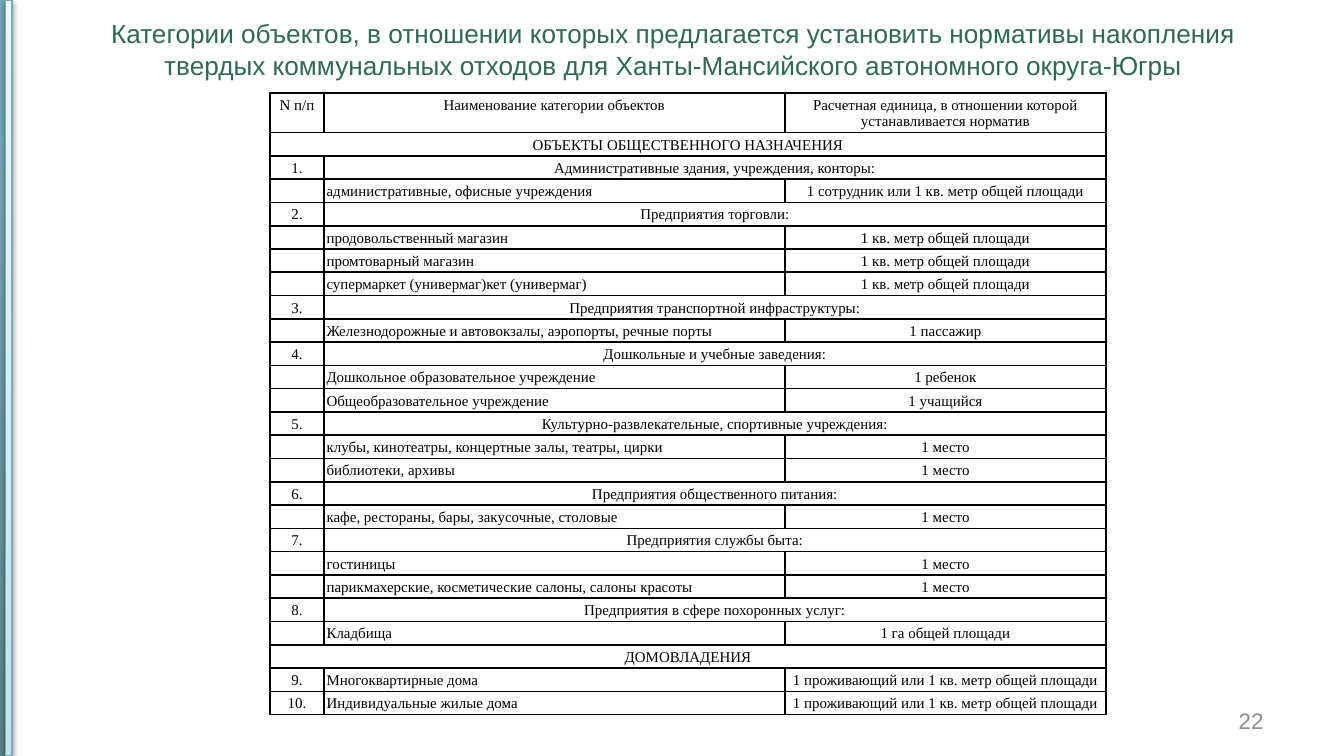
from dataclasses import dataclass

from lxml import etree
from pptx import Presentation
from pptx import util as u
from pptx.dml.color import RGBColor
from pptx.enum import shapes, text
from pptx.oxml import ns


@dataclass(frozen=True)
class Theme:
    heading: str = "316857"
    ink: str = "000000"
    muted: str = "8C8C8C"
    strip_line: str = "80A9B3"
    dark_strip: tuple = ((0, "5D848D"), (80, "79ABB8"), (100, "78ADBA"))
    light_strip: tuple = ((0, "BDE4EF"), (35, "D0EBF3"), (100, "ECF8FB"))
    sans: str = "Arial"
    serif: str = "Times New Roman"
    title_size: int = 14
    number_size: int = 12
    table_size: int = 8


CENTER = text.PP_ALIGN.CENTER
LEFT = text.PP_ALIGN.LEFT
RIGHT = text.PP_ALIGN.RIGHT

TITLE = (
    "Категории объектов, в отношении которых предлагается установить нормативы накопления "
    "твердых коммунальных отходов для Ханты-Мансийского автономного округа-Югры"
)
HEADER = (
    "N п/п",
    "Наименование категории объектов",
    "Расчетная единица, в отношении которой устанавливается норматив",
)
AREA = "1 кв. метр общей площади"
SEAT = "1 место"
RESIDENT = "1 проживающий или 1 кв. метр общей площади"
ROWS = [
    ("ОБЪЕКТЫ ОБЩЕСТВЕННОГО НАЗНАЧЕНИЯ",),
    ("1.", "Административные здания, учреждения, конторы:"),
    ("", "административные, офисные учреждения", "1 сотрудник или 1 кв. метр общей площади"),
    ("2.", "Предприятия торговли:"),
    ("", "продовольственный магазин", AREA),
    ("", "промтоварный магазин", AREA),
    ("", "супермаркет (универмаг)кет (универмаг)", AREA),
    ("3.", "Предприятия транспортной инфраструктуры:"),
    ("", "Железнодорожные и автовокзалы, аэропорты, речные порты", "1 пассажир"),
    ("4.", "Дошкольные и учебные заведения:"),
    ("", "Дошкольное образовательное учреждение", "1 ребенок"),
    ("", "Общеобразовательное учреждение", "1 учащийся"),
    ("5.", "Культурно-развлекательные, спортивные учреждения:"),
    ("", "клубы, кинотеатры, концертные залы, театры, цирки", SEAT),
    ("", "библиотеки, архивы", SEAT),
    ("6.", "Предприятия общественного питания:"),
    ("", "кафе, рестораны, бары, закусочные, столовые", SEAT),
    ("7.", "Предприятия службы быта:"),
    ("", "гостиницы", SEAT),
    ("", "парикмахерские, косметические салоны, салоны красоты", SEAT),
    ("8.", "Предприятия в сфере похоронных услуг:"),
    ("", "Кладбища", "1 га общей площади"),
    ("ДОМОВЛАДЕНИЯ",),
    ("9.", "Многоквартирные дома", RESIDENT),
    ("10.", "Индивидуальные жилые дома", RESIDENT),
]


def add_xml(parent, tag, **attrs):
    return etree.SubElement(parent, ns.qn(tag), {k: str(v) for k, v in attrs.items()})


def write(tf, content, *, size, font, color, align=LEFT, anchor=text.MSO_ANCHOR.MIDDLE):
    tf.word_wrap = True
    tf.vertical_anchor = anchor
    p = tf.paragraphs[0]
    p.alignment = align
    if not content:
        add_xml(p._p, "a:endParaRPr", sz=size * 100)
        return
    r = p.add_run()
    r.text = content
    r.font.size = u.Pt(size)
    r.font.name = font
    r.font.color.rgb = RGBColor.from_string(color)


class Deck:
    def __init__(self, prs, theme):
        self.theme = theme
        self.height = prs.slide_height
        self.s = prs.slides.add_slide(prs.slide_layouts[5])

    def strip(self, left, width, stops, *, line=None, alpha, distance):
        sp = self.s.shapes.add_shape(shapes.MSO_SHAPE.RECTANGLE, u.Inches(left), 0,
                                     u.Inches(width), self.height)
        sp.fill.gradient()
        sp.fill.gradient_angle = 90
        gs_list = sp._element.spPr.find(".//" + ns.qn("a:gsLst"))
        for gs in list(gs_list):
            gs_list.remove(gs)
        for position, color in stops:
            gs = add_xml(gs_list, "a:gs", pos=position * 1000)
            add_xml(gs, "a:srgbClr", val=color)
        if line:
            sp.line.color.rgb = RGBColor.from_string(line)
            sp.line.width = u.Pt(0.75)
        else:
            sp.line.fill.background()
        sp.shadow.inherit = False
        effects = sp._element.spPr.find(ns.qn("a:effectLst"))
        shadow = add_xml(effects, "a:outerShdw", blurRad=u.Pt(3.1), dist=u.Pt(distance),
                         dir=5400000, rotWithShape=0)
        color = add_xml(shadow, "a:srgbClr", val=self.theme.ink)
        add_xml(color, "a:alpha", val=alpha * 1000)

    def title(self, content, box):
        sp = self.s.shapes.title
        sp.left, sp.top, sp.width, sp.height = map(u.Inches, box)
        tf = sp.text_frame
        tf.auto_size = text.MSO_AUTO_SIZE.NONE
        tf.margin_bottom = u.Inches(0.28)
        write(tf, content, size=self.theme.title_size, font=self.theme.sans,
              color=self.theme.heading, align=CENTER)

    def page_number(self, content, box):
        sp = self.s.shapes.add_textbox(*map(u.Inches, box))
        write(sp.text_frame, content, size=self.theme.number_size, font=self.theme.sans,
              color=self.theme.muted, align=RIGHT)

    def cell(self, cell, content, align):
        cell.margin_left = cell.margin_right = u.Inches(0.02)
        cell.margin_top = u.Inches(0.03)
        cell.margin_bottom = 0
        write(cell.text_frame, content, size=self.theme.table_size, font=self.theme.serif,
              color=self.theme.ink, align=align)
        cell.vertical_anchor = text.MSO_ANCHOR.TOP
        tc_pr = cell._tc.get_or_add_tcPr()
        for side in ("a:lnL", "a:lnR", "a:lnT", "a:lnB"):
            ln = add_xml(tc_pr, side, w=u.Pt(1))
            fill = add_xml(ln, "a:solidFill")
            add_xml(fill, "a:srgbClr", val=self.theme.ink)
        cell.fill.background()

    def table(self, header, rows, box, widths, header_height):
        frame = self.s.shapes.add_table(len(rows) + 1, len(widths), *map(u.Inches, box))
        table = frame.table
        table.first_row = table.horz_banding = False
        for column, width in zip(table.columns, widths):
            column.width = u.Inches(width)
        row_height = (box[3] - header_height) / len(rows)
        for i, values in enumerate([header, *rows]):
            table.rows[i].height = u.Inches(row_height if i else header_height)
            last = len(values) - 1
            for j in range(len(widths)):
                is_name = i > 0 and last == 2 and j == 1
                content = values[j] if j <= last else ""
                self.cell(table.cell(i, j), content, LEFT if is_name else CENTER)
            if last < 2:
                table.cell(i, last).merge(table.cell(i, 2))


def main():
    prs = Presentation()
    prs.slide_width = u.Inches(10)
    prs.slide_height = prs.slide_width * 9 // 16
    theme = Theme()
    deck = Deck(prs, theme)
    deck.strip(-0.01, 0.05, theme.dark_strip, alpha=35, distance=1.8)
    deck.strip(0.04, 0.05, theme.light_strip, line=theme.strip_line, alpha=38, distance=1.6)
    deck.title(TITLE, (0.51, 0.01, 9, 0.94))
    deck.page_number("22", (7.17, 5.21, 2.33, 0.3))
    deck.table(HEADER, ROWS, (2.01, 0.69, 6.22, 4.63), (0.4, 3.43, 2.39), 0.29)
    prs.save("out.pptx")


if __name__ == "__main__":
    main()
